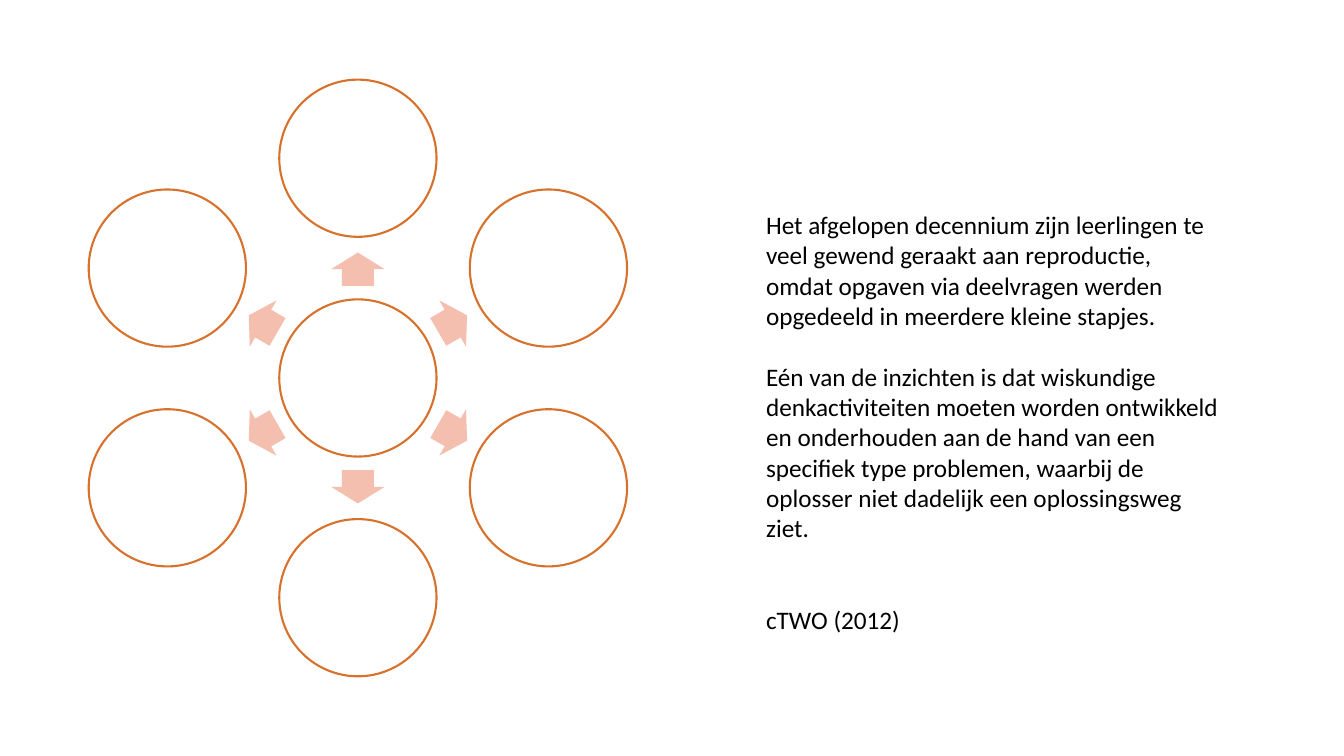
from math import cos, radians, sin

from pptx import Presentation
from pptx.dml.color import RGBColor
from pptx.enum.shapes import MSO_SHAPE as Shape
from pptx.util import Emu, Pt

EMU_PER_PX = 9144
BLACK = RGBColor(0x00, 0x00, 0x00)
WHITE = RGBColor(0xFF, 0xFF, 0xFF)
ORANGE = RGBColor(0xD7, 0x71, 0x2C)
SALMON = RGBColor(0xF4, 0xBF, 0xAE)

CENTER_X, CENTER_Y = 355, 375
CIRCLE_ORBIT, ARROW_ORBIT = 218, 108
DIRECTIONS = range(-90, 270, 60)

QUOTE = [
    ("Het afgelopen decennium zijn leerlingen te veel gewend geraakt aan reproductie, "
     "omdat opgaven via deelvragen werden opgedeeld in meerdere kleine stapjes.", 0),
    ("Eén van de inzichten is dat wiskundige denkactiviteiten moeten worden ontwikkeld "
     "en onderhouden aan de hand van een specifiek type problemen, waarbij de oplosser "
     "niet dadelijk een oplossingsweg ziet.", 22),
    ("cTWO (2012)", 44),
]


def px(length):
    return Emu(length * EMU_PER_PX)


def write(paragraph, text, font="Calibri", size=18, color=BLACK, before=0):
    paragraph.space_before = Pt(before)
    run = paragraph.add_run()
    run.text = text
    run.font.name = font
    run.font.size = Pt(size)
    run.font.color.rgb = color


def orbit_point(radius, angle):
    return (round(CENTER_X + radius * cos(radians(angle))),
            round(CENTER_Y + radius * sin(radians(angle))))


class SlideBuilder:
    circle_size = 156
    arrow_length, arrow_width = 33, 53

    def __init__(self, slide):
        self.slide = slide

    def centered_shape(self, kind, x, y, width, height, fill):
        shape = self.slide.shapes.add_shape(
            kind, px(x) - px(width) // 2, px(y) - px(height) // 2, px(width), px(height))
        shape.shadow.inherit = False
        shape.fill.solid()
        shape.fill.fore_color.rgb = fill
        return shape

    def circle(self, x, y):
        shape = self.centered_shape(
            Shape.OVAL, x, y, self.circle_size, self.circle_size, WHITE)
        shape.line.color.rgb = ORANGE
        shape.line.width = Pt(1.5)

    def arrow(self, x, y, angle):
        shape = self.centered_shape(
            Shape.RIGHT_ARROW, x, y, self.arrow_length, self.arrow_width, SALMON)
        shape.adjustments[0] = 0.6
        shape.adjustments[1] = 0.5
        shape.rotation = angle % 360
        shape.line.fill.background()

    def text_box(self, left, top, width, height, paragraphs):
        box = self.slide.shapes.add_textbox(px(left), px(top), px(width), px(height))
        frame = box.text_frame
        frame.word_wrap = True
        for index, (text, before) in enumerate(paragraphs):
            paragraph = frame.add_paragraph() if index else frame.paragraphs[0]
            write(paragraph, text, before=before)


def main():
    presentation = Presentation()
    presentation.slide_width, presentation.slide_height = px(1333), px(750)
    builder = SlideBuilder(presentation.slides.add_slide(presentation.slide_layouts[6]))

    builder.circle(CENTER_X, CENTER_Y)
    for angle in DIRECTIONS:
        builder.arrow(*orbit_point(ARROW_ORBIT, angle), angle)
        builder.circle(*orbit_point(CIRCLE_ORBIT, angle))
    builder.text_box(750, 203, 470, 434, QUOTE)

    presentation.save("out.pptx")


if __name__ == "__main__":
    main()
